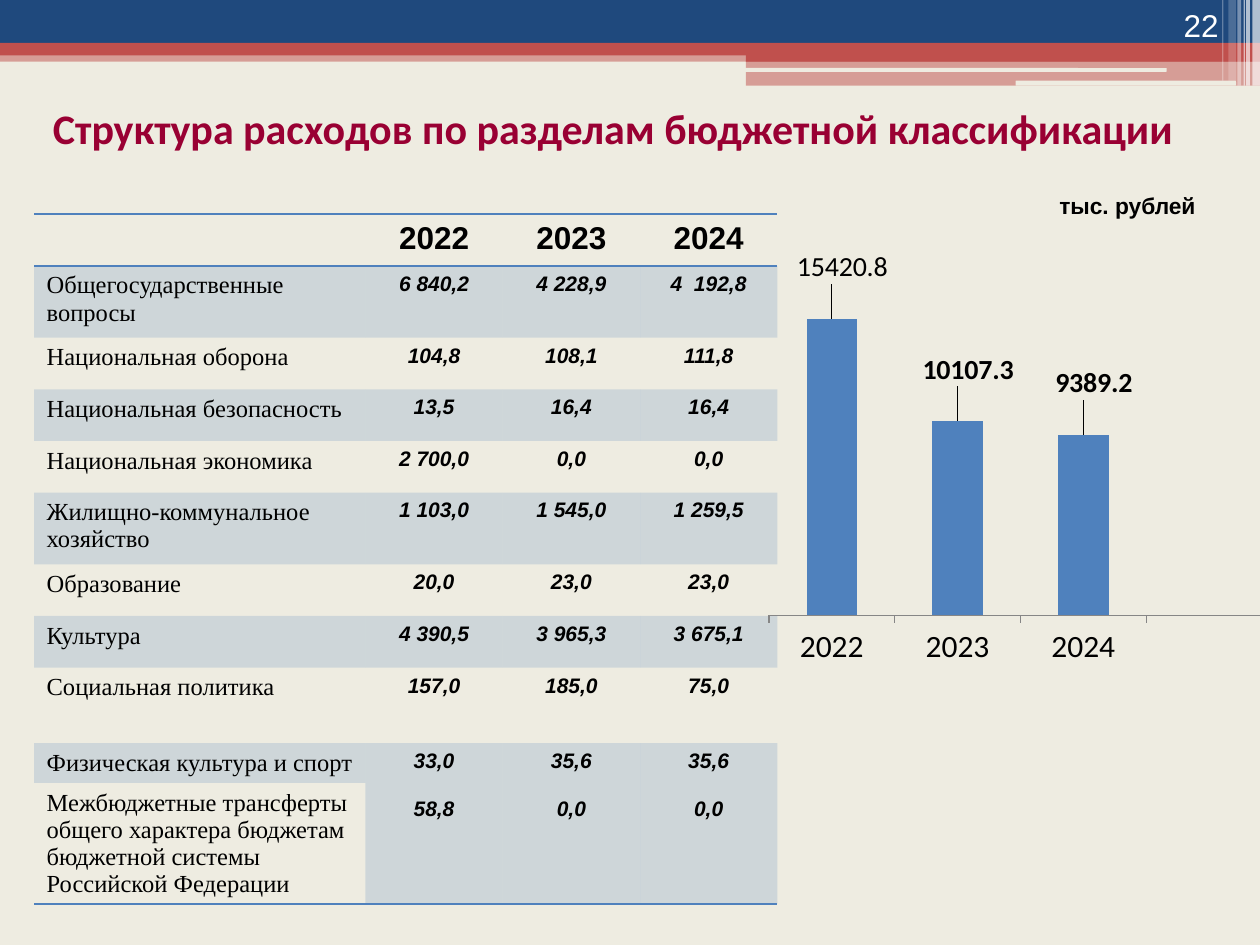
"""Build the slide on the structure of expenditure by budget section."""
import lxml.etree
import pptx
import pptx.chart.data
import pptx.dml.color
import pptx.enum.chart
import pptx.enum.shapes
import pptx.enum.text
import pptx.oxml.ns
import pptx.util

Inches = pptx.util.Inches
Pt = pptx.util.Pt
RGBColor = pptx.dml.color.RGBColor
Shape = pptx.enum.shapes.MSO_SHAPE
Align = pptx.enum.text.PP_ALIGN
Anchor = pptx.enum.text.MSO_ANCHOR
qn = pptx.oxml.ns.qn

CREAM = RGBColor(0xEE, 0xEC, 0xE1)
NAVY = RGBColor(0x1F, 0x49, 0x7D)
RED = RGBColor(0xC0, 0x50, 0x4D)
BLUE = RGBColor(0x4F, 0x81, 0xBD)
CRIMSON = RGBColor(0x99, 0x00, 0x33)
GREY = RGBColor(0x86, 0x86, 0x86)
BLACK = RGBColor(0, 0, 0)
WHITE = RGBColor(0xFF, 0xFF, 0xFF)

BANDS = [
    (0, 0.4, 10, 0.09, RED, 50, Shape.RECTANGLE),
    (0, 0, 10, 0.34, NAVY, 100, Shape.RECTANGLE),
    (0, 0.34, 10, 0.1, RED, 100, Shape.RECTANGLE),
    (5.92, 0.39, 4.08, 0.1, RED, 100, Shape.RECTANGLE),
    (5.92, 0.48, 4.08, 0.2, RED, 50, Shape.RECTANGLE),
    (5.91, 0.54, 3.35, 0.03, CREAM, 100, Shape.ROUNDED_RECTANGLE),
    (8.06, 0.64, 1.75, 0.04, CREAM, 100, Shape.ROUNDED_RECTANGLE),
]
STRIPES = [
    (9.94, 0.06, 0.68, 65), (9.89, 0.03, 0.68, 65), (9.87, 0.01, 0.68, 60),
    (9.82, 0.03, 0.68, 40), (9.75, 0.06, 0.64, 20), (9.7, 0.01, 0.64, 30),
]
YEARS = ["2022", "2023", "2024"]
SECTIONS = [
    ("Общегосударственные вопросы", "6 840,2", "4 228,9", "4  192,8"),
    ("Национальная оборона", "104,8", "108,1", "111,8"),
    ("Национальная безопасность", "13,5", "16,4", "16,4"),
    ("Национальная экономика", "2 700,0", "0,0", "0,0"),
    ("Жилищно-коммунальное хозяйство", "1 103,0", "1 545,0", "1 259,5"),
    ("Образование", "20,0", "23,0", "23,0"),
    ("Культура", "4 390,5", "3 965,3", "3 675,1"),
    ("Социальная политика", "157,0", "185,0", "75,0"),
    ("Физическая культура и спорт", "33,0\n58,8", "35,6\n0,0", "35,6\n0,0"),
    ("Межбюджетные трансферты общего характера бюджетам бюджетной системы "
     "Российской Федерации", "", "", ""),
]
COL_WIDTHS = [2.63, 1.09, 1.09, 1.09]
ROW_HEIGHTS = [0.41, 0.57, 0.41, 0.41, 0.41, 0.57, 0.41, 0.41, 0.6, 0.31, 0.96]
TOTALS = [15420.8, 10107.3, 9389.2, None]
NO_STYLE = "{2D5ABB26-0587-4C30-8999-92F81FD0307C}"


def set_font(font, name, size, color=BLACK, bold=False, italic=False):
    """Set every property of a font."""
    font.name, font.size, font.bold, font.italic = name, Pt(size), bold, italic
    font.color.rgb = color


def set_text(tf, text, align, *font):
    """Write text and format its paragraphs and runs."""
    tf.text = text
    for p in tf.paragraphs:
        p.alignment = align
        for r in p.runs:
            set_font(r.font, *font)


def set_alpha(element, percent):
    """Make the fill colour of an element translucent."""
    color = next(element.iter(qn("a:srgbClr")))
    lxml.etree.SubElement(color, qn("a:alpha")).set("val", str(percent * 1000))


def add_bar(s, left, top, width, height, color, alpha, kind=Shape.RECTANGLE):
    """Add a borderless bar to the header."""
    sp = s.shapes.add_shape(kind, Inches(left), Inches(top), Inches(width), Inches(height))
    sp.shadow.inherit = False
    sp.fill.solid()
    sp.fill.fore_color.rgb = color
    sp.line.fill.background()
    if alpha < 100:
        set_alpha(sp.element, alpha)


def add_text(s, left, top, width, height, text, align, anchor, *font):
    """Add a wrapping text box."""
    sp = s.shapes.add_textbox(Inches(left), Inches(top), Inches(width), Inches(height))
    tf = sp.text_frame
    tf.word_wrap = True
    tf.vertical_anchor = anchor
    set_text(tf, text, align, *font)


def add_title(s, text):
    """Place and format the title."""
    sp = s.shapes.title
    sp.left, sp.top, sp.width, sp.height = Inches(0), Inches(0.76), Inches(9.73), Inches(0.51)
    sp.text_frame.vertical_anchor = Anchor.TOP
    set_text(sp.text_frame, text, Align.CENTER, "Calibri", 24, CRIMSON, True)


def set_border(cell, side):
    """Draw a blue line on one side of a cell."""
    ln = lxml.etree.Element(qn(f"a:{side}"), w=str(Pt(1)))
    fill = lxml.etree.SubElement(ln, qn("a:solidFill"))
    lxml.etree.SubElement(fill, qn("a:srgbClr")).set("val", str(BLUE))
    cell._tc.get_or_add_tcPr().insert(0, ln)


def format_cell(cell, text, row, col):
    """Fill one table cell according to its place."""
    last = len(SECTIONS)
    if row == 0:
        set_text(cell.text_frame, text, Align.CENTER, "Arial", 18, BLACK, True)
    elif col == 0:
        set_text(cell.text_frame, text, Align.LEFT, "Times New Roman", 14)
    elif text:
        set_text(cell.text_frame, text, Align.CENTER, "Arial", 12, BLACK, True, True)
        for p in cell.text_frame.paragraphs[1:]:
            p.space_before = Pt(14)
    if row % 2 or (row == last and col):
        cell.fill.solid()
        cell.fill.fore_color.rgb = BLUE
        set_alpha(cell._tc.get_or_add_tcPr(), 20)
    else:
        cell.fill.background()
    if row in (0, last) or (row == last - 1 and col):
        set_border(cell, "lnB")
    if row == 0:
        set_border(cell, "lnT")


def add_budget_table(s):
    """Add the table of sections and years."""
    rows = [("", *YEARS), *SECTIONS]
    frame = s.shapes.add_table(len(rows), len(COL_WIDTHS), Inches(0.27), Inches(1.7),
                               Inches(sum(COL_WIDTHS)), Inches(sum(ROW_HEIGHTS)))
    table = frame.table
    table.first_row = table.horz_banding = False
    next(frame.element.iter(qn("a:tableStyleId"))).text = NO_STYLE
    for column, width in zip(table.columns, COL_WIDTHS):
        column.width = Inches(width)
    for i, (row, height) in enumerate(zip(rows, ROW_HEIGHTS)):
        table.rows[i].height = Inches(height)
        for j, text in enumerate(row):
            format_cell(table.cell(i, j), text, i, j)
    last = len(SECTIONS)
    for j in range(1, len(COL_WIDTHS)):
        table.cell(last - 1, j).merge(table.cell(last, j))


def set_layout(parent, index, **values):
    """Insert a manual chart layout."""
    layout = lxml.etree.Element(qn("c:layout"))
    manual = lxml.etree.SubElement(layout, qn("c:manualLayout"))
    for name, value in values.items():
        lxml.etree.SubElement(manual, qn(f"c:{name}")).set("val", str(value))
    parent.insert(index, layout)


def add_totals_chart(s):
    """Add the column chart of yearly totals."""
    data = pptx.chart.data.CategoryChartData()
    data.categories = [*YEARS, ""]
    data.add_series("Series 1", TOTALS)
    kind = pptx.enum.chart.XL_CHART_TYPE.COLUMN_CLUSTERED
    chart = s.shapes.add_chart(kind, Inches(6.02), Inches(1.99), Inches(4.16),
                               Inches(3.36), data).chart
    chart.has_legend = chart.has_title = False
    set_font(chart.font, "Calibri", 18)
    chart.value_axis.visible = chart.value_axis.has_major_gridlines = False
    chart.value_axis.minimum_scale, chart.value_axis.maximum_scale = 0, 18000
    chart.category_axis.format.line.color.rgb = GREY
    set_font(chart.category_axis.tick_labels.font, "Calibri", 18)
    plot = chart.plots[0]
    plot.gap_width, plot.vary_by_categories = 150, False
    series = plot.series[0]
    series.format.fill.solid()
    series.format.fill.fore_color.rgb = BLUE
    for i in range(len(YEARS)):
        label = series.points[i].data_label
        set_font(label.font, "Calibri", 16, BLACK, i > 0)
        label.position = pptx.enum.chart.XL_LABEL_POSITION.OUTSIDE_END
    for label in chart.element.iter(qn("c:dLbl")):
        set_layout(label, 1, x=0.02, y=-0.07)
    area = next(chart.element.iter(qn("c:plotArea")))
    for old in area.findall(qn("c:layout")):
        area.remove(old)
    set_layout(area, 0, layoutTarget="inner", xMode="edge", yMode="edge",
               x=0.02, y=0.03, w=0.96, h=0.83)


def main():
    """Assemble and save the slide."""
    prs = pptx.Presentation()
    prs.slide_width, prs.slide_height = Inches(10), Inches(7.5)
    s = prs.slides.add_slide(prs.slide_layouts[5])
    s.background.fill.solid()
    s.background.fill.fore_color.rgb = CREAM
    for band in BANDS:
        add_bar(s, *band)
    for left, width, height, alpha in STRIPES:
        add_bar(s, left, 0, width, height, WHITE, alpha)
    add_budget_table(s)
    add_title(s, "Структура расходов по разделам бюджетной классификации")
    add_text(s, 8.94, 0, 0.83, 0.4, "22", Align.RIGHT, Anchor.BOTTOM, "Arial", 18, WHITE)
    add_text(s, 8.31, 1.47, 1.5, 0.32, "тыс. рублей", Align.LEFT, Anchor.TOP,
             "Arial", 13, BLACK, True)
    add_totals_chart(s)
    prs.save("out.pptx")


if __name__ == "__main__":
    main()
